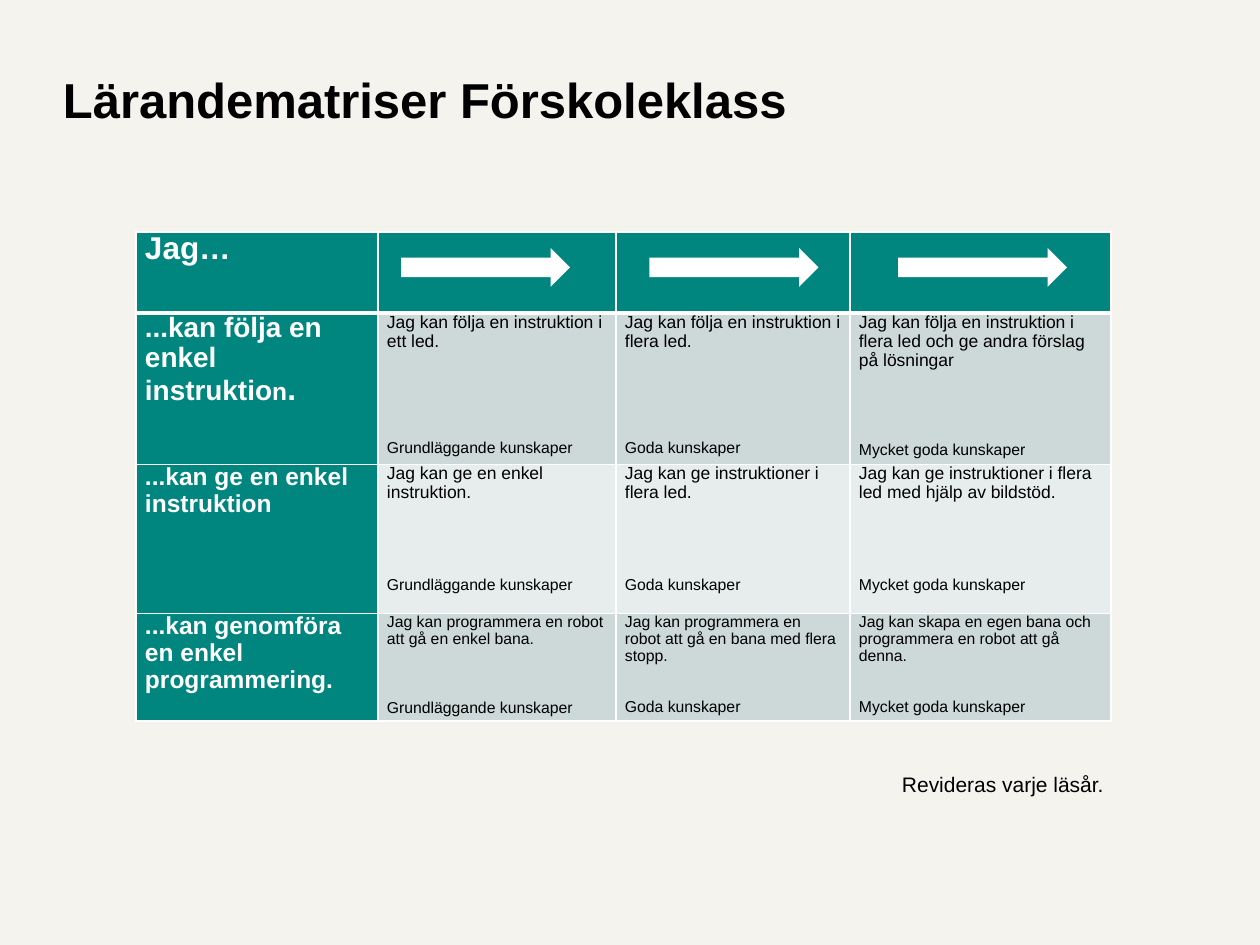
from pptx import Presentation
from pptx import util as u
from pptx.dml.color import RGBColor
from pptx.enum import shapes, text
from pptx.oxml import parse_xml
from pptx.oxml.ns import nsdecls

BACK = RGBColor(0xF5, 0xF3, 0xEE)
TEAL = RGBColor(0x00, 0x86, 0x7F)
DARK_BAND = RGBColor(0xCC, 0xD9, 0xD8)
LIGHT_BAND = RGBColor(0xE7, 0xED, 0xEC)
WHITE = RGBColor(0xFF, 0xFF, 0xFF)
BLACK = RGBColor(0, 0, 0)
FONT = "Arial"

LEVELS = ["Grundläggande kunskaper", "Goda kunskaper", "Mycket goda kunskaper"]
COLS = [242, 238, 234, 261]
HEADER_HEIGHT = 81
ROWS = [
    (150, DARK_BAND, 10,
     [("...kan följa en enkel instruktio", 16), ("n", 14), (".", 18)],
     [("Jag kan följa en instruktion i ett led.", 89),
      ("Jag kan följa en instruktion i flera led.", 89),
      ("Jag kan följa en instruktion i flera led och ge andra förslag på lösningar", 72)]),
    (149, LIGHT_BAND, 10,
     [("...kan ge en enkel instruktion", 14)],
     [("Jag kan ge en enkel instruktion.", 74),
      ("Jag kan ge instruktioner i flera led.", 74),
      ("Jag kan ge instruktioner i flera led med hjälp av bildstöd.", 74)]),
    (106, DARK_BAND, 9,
     [("...kan genomföra en enkel programmering.", 14)],
     [("Jag kan programmera en robot att gå en enkel bana.", 52),
      ("Jag kan programmera en robot att gå en bana med flera stopp.", 34),
      ("Jag kan skapa en egen bana och programmera en robot att gå denna.", 34)]),
]


def px(n):
    """Turn slide pixels into EMU."""
    return u.Emu(round(n * 914400 / 126))


def style(font, size, color, bold=False):
    """Set the common font properties."""
    font.name, font.size, font.bold = FONT, u.Pt(size), bold
    font.color.rgb = color


def add_label(s, box, insets, content, size, bold=False):
    """Place one line of black text in a box."""
    tf = s.shapes.add_textbox(*map(px, box)).text_frame
    tf.word_wrap = True
    tf.margin_left, tf.margin_top, tf.margin_right, tf.margin_bottom = map(px, insets)
    p = tf.paragraphs[0]
    p.text = content
    style(p.font, size, BLACK, bold)


def format_cell(cell, fill, bottom=1, top=1):
    """Set fill, margins and white borders of a cell."""
    cell.margin_left = cell.margin_right = px(9)
    cell.margin_top = cell.margin_bottom = 0
    cell.vertical_anchor = text.MSO_ANCHOR.TOP
    for side, width in (("L", 1), ("R", 1), ("T", top), ("B", bottom)):
        cell._tc.get_or_add_tcPr().append(parse_xml(
            f'<a:ln{side} {nsdecls("a")} w="{u.Pt(width)}"><a:solidFill>'
            f'<a:srgbClr val="{WHITE}"/></a:solidFill></a:ln{side}>'))
    cell.fill.solid()
    cell.fill.fore_color.rgb = fill


def write_heading(cell, runs):
    """Write a bold white row heading from sized runs."""
    p = cell.text_frame.paragraphs[0]
    p.line_spacing = 0.97
    for content, size in runs:
        r = p.add_run()
        r.text = content
        style(r.font, size, WHITE, True)


def write_level(cell, statement, size, gap, level):
    """Write a statement with its level name below it."""
    tf = cell.text_frame
    tf.text = statement
    label = tf.add_paragraph()
    label.text = level
    label.space_before = px(gap)
    for p, points in zip(tf.paragraphs, (size, 9)):
        p.line_spacing = 0.97
        style(p.font, points, BLACK)


def add_matrix(s, left, top):
    """Place the learning matrix with its header arrows."""
    height = HEADER_HEIGHT + sum(row[0] for row in ROWS)
    table = s.shapes.add_table(len(ROWS) + 1, len(COLS), px(left), px(top),
                               px(sum(COLS)), px(height)).table
    for column, width in zip(table.columns, COLS):
        column.width = px(width)
    table.rows[0].height = px(HEADER_HEIGHT)
    for c in range(len(COLS)):
        format_cell(table.cell(0, c), TEAL, bottom=3)
    write_heading(table.cell(0, 0), [("Jag…", 18)])
    for i, (row_height, band, size, heading, statements) in enumerate(ROWS, 1):
        table.rows[i].height = px(row_height)
        edge = 3 if i == 1 else 1
        format_cell(table.cell(i, 0), TEAL, top=edge)
        write_heading(table.cell(i, 0), heading)
        for c, ((statement, gap), level) in enumerate(zip(statements, LEVELS), 1):
            format_cell(table.cell(i, c), band, top=edge)
            write_level(table.cell(i, c), statement, size, gap, level)
    for i in range(len(LEVELS)):
        sp = s.shapes.add_shape(shapes.MSO_SHAPE.RIGHT_ARROW, px(left + 265 + 248.5 * i),
                                px(top + 16), px(169), px(39))
        sp.shadow.inherit = False
        sp.fill.solid()
        sp.fill.fore_color.rgb = WHITE
        sp.line.fill.background()


def main():
    """Build and save the slide."""
    prs = Presentation()
    prs.slide_width, prs.slide_height = px(1260), px(945)
    s = prs.slides.add_slide(prs.slide_layouts[6])
    s.background.fill.solid()
    s.background.fill.fore_color.rgb = BACK
    add_label(s, (63, 63, 756, 134), (0, 6, 0, 0), "Lärandematriser Förskoleklass", 28, True)
    add_matrix(s, 136, 232)
    add_label(s, (890, 766, 232, 38), (12, 6, 12, 6), "Revideras varje läsår.", 12)
    prs.save("out.pptx")


if __name__ == "__main__":
    main()
